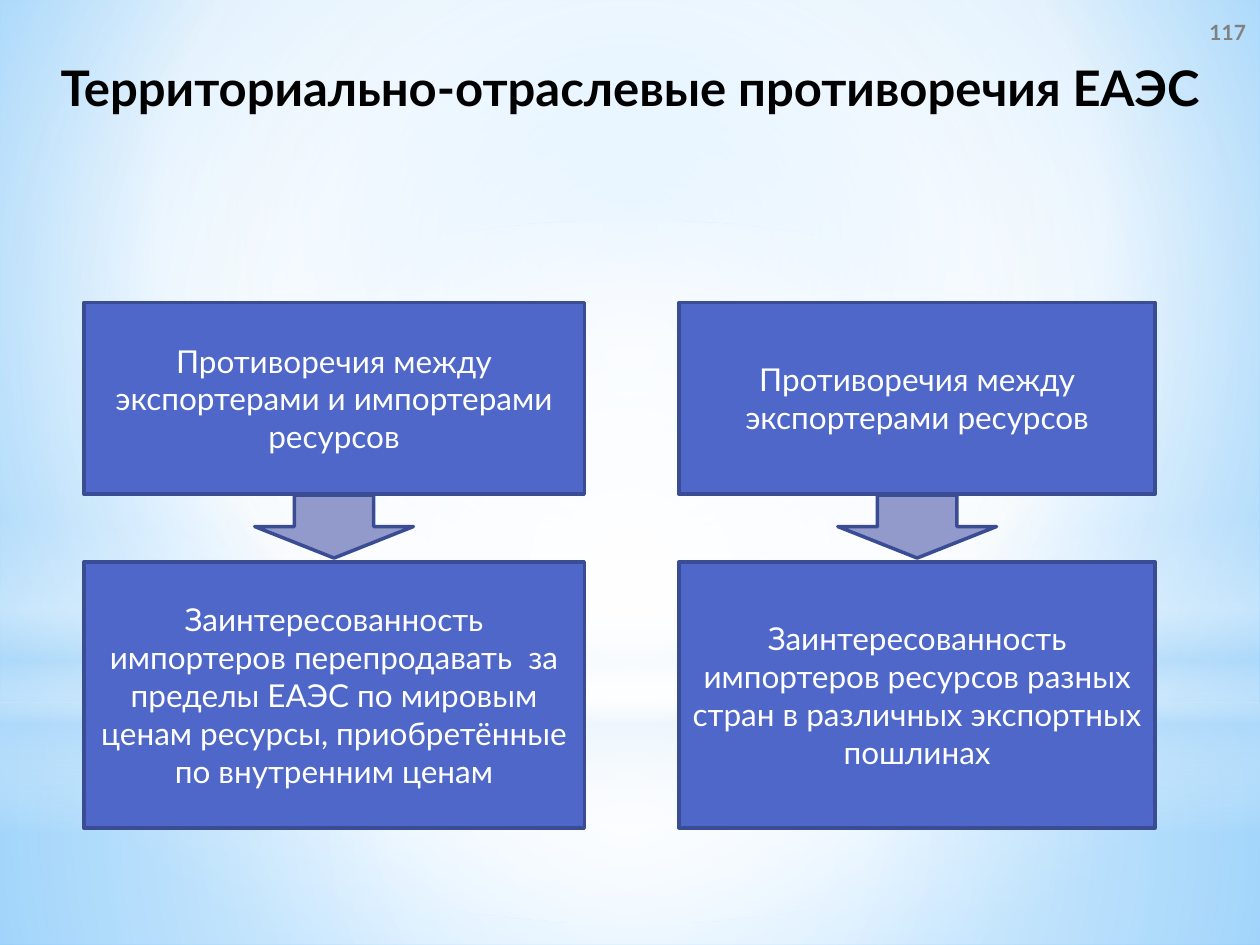
from lxml import etree
from pptx import Presentation
from pptx import util as u
from pptx.dml.color import RGBColor
from pptx.enum import shapes, text
from pptx.oxml.ns import qn

COLORS = {
    "white": "FFFFFF", "pale": "B4DCFA", "sky": "9ED5FF", "deep": "5BB9FF",
    "box": "4E67C8", "arrow": "919ACA", "outline": "3A4C94",
    "title": "000000", "number": "808080",
}
FONT = "Lato"


def set_gradient(fill, owner, stops, focus=None):
    """Stops are (position, colour, opacity) in percent; no focus means top to bottom."""
    fill.gradient()
    grad = owner.find(".//" + qn("a:gradFill"))
    for child in list(grad):
        grad.remove(child)
    stop_list = etree.SubElement(grad, qn("a:gsLst"))
    for position, color, opacity in stops:
        stop = etree.SubElement(stop_list, qn("a:gs"), pos=str(position * 1000))
        rgb = etree.SubElement(stop, qn("a:srgbClr"), val=COLORS[color])
        if opacity < 100:
            etree.SubElement(rgb, qn("a:alpha"), val=str(opacity * 1000))
    if focus:
        circle = etree.SubElement(grad, qn("a:path"))
        circle.set("path", "circle")
        sides = {side: str(value * 1000) for side, value in zip("ltrb", focus)}
        etree.SubElement(circle, qn("a:fillToRect"), **sides)
    else:
        etree.SubElement(grad, qn("a:lin"), ang="5400000", scaled="0")


def write(frame, words, size, color, bold=False):
    frame.word_wrap = True
    paragraph = frame.paragraphs[0]
    paragraph.alignment = text.PP_ALIGN.CENTER
    run = paragraph.add_run()
    run.text = words
    run.font.name = FONT
    run.font.size = u.Pt(size)
    run.font.bold = bold
    run.font.color.rgb = RGBColor.from_string(COLORS[color])


prs = Presentation()
prs.slide_width, prs.slide_height = u.Cm(25.4), u.Cm(19.05)
slide = prs.slides.add_slide(prs.slide_layouts[6])

# Background and its soft light layers
set_gradient(slide.background.fill, slide.background._cSld,
             [(0, "sky", 100), (60, "white", 100), (100, "deep", 100)], (20, 10, 20, 60))
RECT, OVAL = shapes.MSO_SHAPE.RECTANGLE, shapes.MSO_SHAPE.OVAL
CENTER = (50, 50, 50, 50)
light_layers = [
    (RECT, 14.17, 4.88, [(0, "white", 91), (37, "white", 76), (100, "pale", 79)], CENTER),
    (RECT, 0, 14.17, [(0, "white", 89), (48, "white", 62), (100, "pale", 79)], CENTER),
    (RECT, 10.46, 6.35, [(0, "white", 0), (29, "white", 30), (45, "pale", 40),
                         (55, "white", 26), (65, "pale", 60), (100, "white", 0)], None),
    (OVAL, 4.45, 14.17, [(0, "white", 100), (56, "white", 0)], CENTER),
]
for outline, top, height, stops, focus in light_layers:
    layer = slide.shapes.add_shape(outline, 0, u.Cm(top), prs.slide_width, u.Cm(height))
    layer.shadow.inherit = False
    layer.line.fill.background()
    set_gradient(layer.fill, layer._element.spPr, stops, focus)

# Title
title = slide.shapes.add_textbox(u.Cm(0.3), u.Cm(1.04), u.Cm(24.8), u.Cm(1.45))
write(title.text_frame, "Территориально-отраслевые противоречия ЕАЭС", 28, "title", True)
title.text_frame.auto_size = text.MSO_AUTO_SIZE.SHAPE_TO_FIT_TEXT

# Page number
number = slide.shapes.add_textbox(u.Cm(24.1), 0, u.Cm(1.3), u.Cm(1.3))
number.text_frame.margin_left = number.text_frame.margin_right = 0
number.text_frame.vertical_anchor = text.MSO_ANCHOR.MIDDLE
write(number.text_frame, "117", 12, "number", True)

# Two columns: contradiction, arrow, interest
ARROW_WIDTH = 3.2
columns = [
    (1.69, 10.09, "Противоречия между экспортерами и импортерами ресурсов",
     "Заинтересованность импортеров перепродавать  за пределы ЕАЭС по мировым ценам "
     "ресурсы, приобретённые по внутренним ценам"),
    (13.69, 9.6, "Противоречия между экспортерами ресурсов",
     "Заинтересованность импортеров ресурсов разных стран в различных экспортных пошлинах"),
]
for left, width, contradiction, interest in columns:
    arrow_left = left + (width - ARROW_WIDTH) / 2
    parts = [
        (RECT, left, 6.1, width, 3.86, "box", contradiction),
        (RECT, left, 11.33, width, 5.36, "box", interest),
        (shapes.MSO_SHAPE.DOWN_ARROW, arrow_left, 9.98, ARROW_WIDTH, 1.27, "arrow", ""),
    ]
    for outline, x, y, w, h, color, words in parts:
        part = slide.shapes.add_shape(outline, u.Cm(x), u.Cm(y), u.Cm(w), u.Cm(h))
        part.shadow.inherit = False
        part.fill.solid()
        part.fill.fore_color.rgb = RGBColor.from_string(COLORS[color])
        part.line.color.rgb = RGBColor.from_string(COLORS["outline"])
        part.line.width = u.Pt(2)
        if words:
            part.text_frame.vertical_anchor = text.MSO_ANCHOR.MIDDLE
            write(part.text_frame, words, 18, "white")

prs.save("out.pptx")
